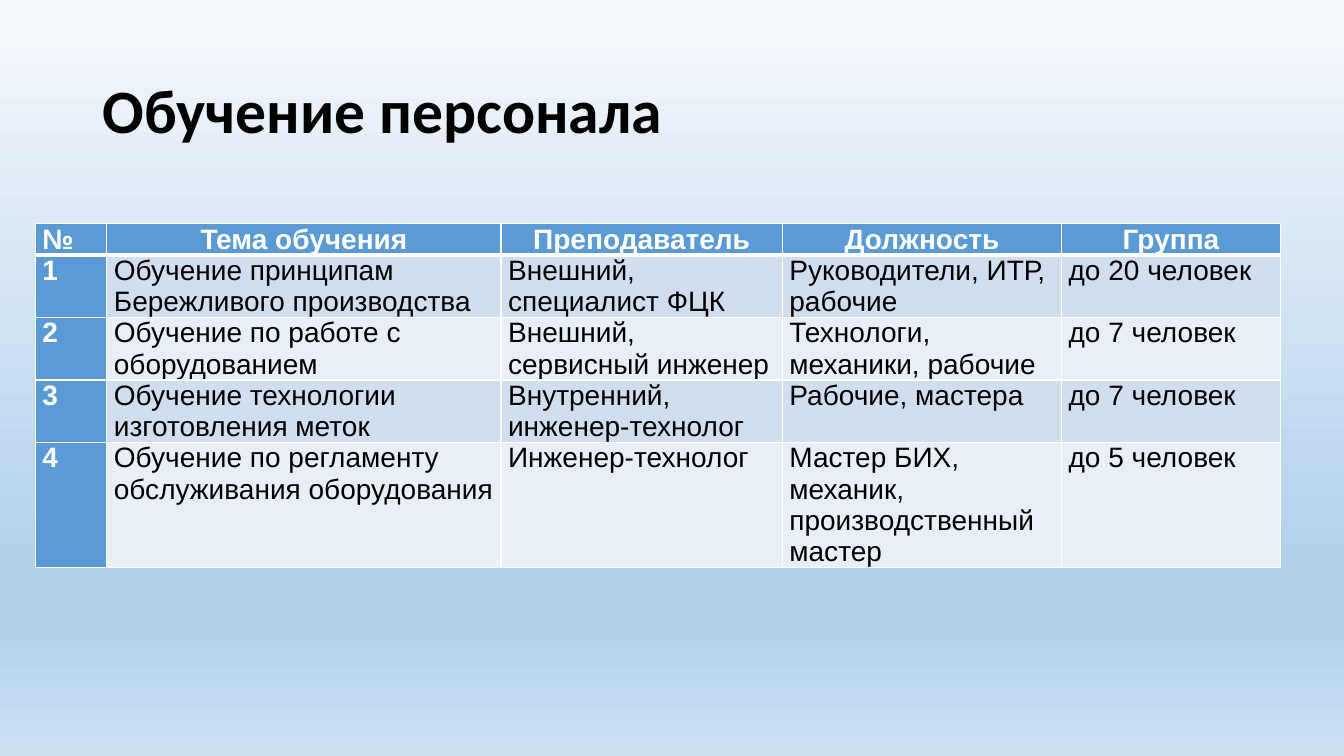
"""Build the staff training slide with its schedule table."""
from copy import deepcopy
from dataclasses import dataclass

from lxml.etree import SubElement
from pptx import Presentation
from pptx.dml.color import RGBColor
from pptx.enum.text import MSO_ANCHOR, MSO_AUTO_SIZE, PP_ALIGN
from pptx.oxml.ns import qn
from pptx.slide import Slide
from pptx.table import _Cell
from pptx.text.text import TextFrame
from pptx.util import Inches, Pt

BLACK = RGBColor(0x00, 0x00, 0x00)
WHITE = RGBColor(0xFF, 0xFF, 0xFF)
HEADER_BLUE = RGBColor(0x5B, 0x9B, 0xD5)
BAND_DARK = RGBColor(0xD0, 0xDE, 0xEF)
BAND_LIGHT = RGBColor(0xE9, 0xEF, 0xF7)
SKY_TOP = RGBColor(0xF6, 0xF9, 0xFC)
SKY_MIDDLE = RGBColor(0xB3, 0xD1, 0xEC)
SKY_BOTTOM = RGBColor(0xCC, 0xE0, 0xF2)

BACKGROUND_STOPS = [(0, SKY_TOP), (0.74, SKY_MIDDLE), (0.83, SKY_MIDDLE), (1, SKY_BOTTOM)]
ROW_HEIGHT = 0.28
THIN, THICK = 1, 3


@dataclass(frozen=True)
class Column:
    """Heading, width in inches and heading alignment of a table column."""

    heading: str
    width: float
    align: PP_ALIGN = PP_ALIGN.CENTER


@dataclass(frozen=True)
class Training:
    """One training course in the schedule."""

    topic: str
    teacher: str
    position: str
    group: str


COLUMNS = [
    Column("№", 0.71, PP_ALIGN.JUSTIFY),
    Column("Тема обучения", 3.91),
    Column("Преподаватель", 2.79),
    Column("Должность", 2.77),
    Column("Группа", 2.17),
]
TRAININGS = [
    Training("Обучение принципам Бережливого производства", "Внешний,\nспециалист ФЦК",
             "Руководители, ИТР, рабочие", "до 20 человек"),
    Training("Обучение по работе с оборудованием", "Внешний, сервисный инженер",
             "Технологи, механики, рабочие", "до 7 человек"),
    Training("Обучение технологии изготовления меток", "Внутренний, инженер-технолог",
             "Рабочие, мастера", "до 7 человек"),
    Training("Обучение по регламенту обслуживания оборудования", "Инженер-технолог",
             "Мастер БИХ, механик, производственный мастер", "до 5 человек"),
]


def write_text(frame: TextFrame, text: str, *, size: float = 20, font: str = "Arial",
               color: RGBColor = BLACK, bold: bool = False,
               align: PP_ALIGN = PP_ALIGN.LEFT, line_spacing: float = 1.0) -> None:
    """Fill a text frame, one paragraph for each line of text."""
    frame.text = text
    for paragraph in frame.paragraphs:
        paragraph.alignment = align
        paragraph.line_spacing = line_spacing
        for run in paragraph.runs:
            run.font.size = Pt(size)
            run.font.name = font
            run.font.bold = bold
            run.font.color.rgb = color


def paint_background(slide: Slide) -> None:
    """Give the slide its vertical gradient."""
    fill = slide.background.fill
    fill.gradient()
    fill.gradient_angle = 270
    stop_list = slide.element.find(".//" + qn("a:gsLst"))
    while len(stop_list) < len(BACKGROUND_STOPS):
        stop_list.append(deepcopy(stop_list[0]))
    for stop, (position, color) in zip(fill.gradient_stops, BACKGROUND_STOPS):
        stop.position = position
        stop.color.rgb = color


def set_borders(cell: _Cell, *, top: float, bottom: float) -> None:
    """Draw white borders around a cell, with widths in points."""
    properties = cell._tc.get_or_add_tcPr()
    widths = {"a:lnL": THIN, "a:lnR": THIN, "a:lnT": top, "a:lnB": bottom}
    for index, (tag, width) in enumerate(widths.items()):
        line = SubElement(properties, qn(tag), w=str(Pt(width)))
        SubElement(SubElement(line, qn("a:solidFill")), qn("a:srgbClr"), val=str(WHITE))
        properties.insert(index, line)


def fill_cell(cell: _Cell, text: str, row: int, column: int) -> None:
    """Write and format a cell according to its place in the table."""
    emphasized = row == 0 or column == 0
    band = BAND_DARK if row % 2 else BAND_LIGHT
    cell.margin_left = cell.margin_right = Inches(0.07)
    cell.margin_top = cell.margin_bottom = 0
    cell.fill.solid()
    cell.fill.fore_color.rgb = HEADER_BLUE if emphasized else band
    write_text(cell.text_frame, text, bold=emphasized,
               color=WHITE if emphasized else BLACK,
               align=COLUMNS[column].align if row == 0 else PP_ALIGN.LEFT)
    set_borders(cell, top=THICK if row == 1 else THIN, bottom=THICK if row == 0 else THIN)


def add_title(slide: Slide, text: str) -> None:
    """Place and format the slide title."""
    title = slide.shapes.title
    title.left, title.top = Inches(0.92), Inches(0.4)
    title.width, title.height = Inches(11.5), Inches(1.45)
    frame = title.text_frame
    frame.auto_size = MSO_AUTO_SIZE.NONE
    frame.vertical_anchor = MSO_ANCHOR.MIDDLE
    write_text(frame, text, size=44, font="Calibri", bold=True, line_spacing=0.9)


def add_training_table(slide: Slide) -> None:
    """Add the table of training courses."""
    rows = [[column.heading for column in COLUMNS]]
    rows += [[str(number), training.topic, training.teacher, training.position, training.group]
             for number, training in enumerate(TRAININGS, start=1)]
    width = sum(column.width for column in COLUMNS)
    table = slide.shapes.add_table(len(rows), len(COLUMNS), Inches(0.35), Inches(2.22),
                                   Inches(width), Inches(ROW_HEIGHT * len(rows))).table
    table.first_col = True
    for table_column, column in zip(table.columns, COLUMNS):
        table_column.width = Inches(column.width)
    for row, texts in enumerate(rows):
        table.rows[row].height = Inches(ROW_HEIGHT)
        for column, text in enumerate(texts):
            fill_cell(table.cell(row, column), text, row, column)


def main() -> None:
    """Create and save the presentation."""
    presentation = Presentation()
    presentation.slide_width = Inches(13.33)
    presentation.slide_height = Inches(7.5)
    slide = presentation.slides.add_slide(presentation.slide_layouts[5])
    paint_background(slide)
    add_title(slide, "Обучение персонала")
    add_training_table(slide)
    presentation.save("out.pptx")


if __name__ == "__main__":
    main()
